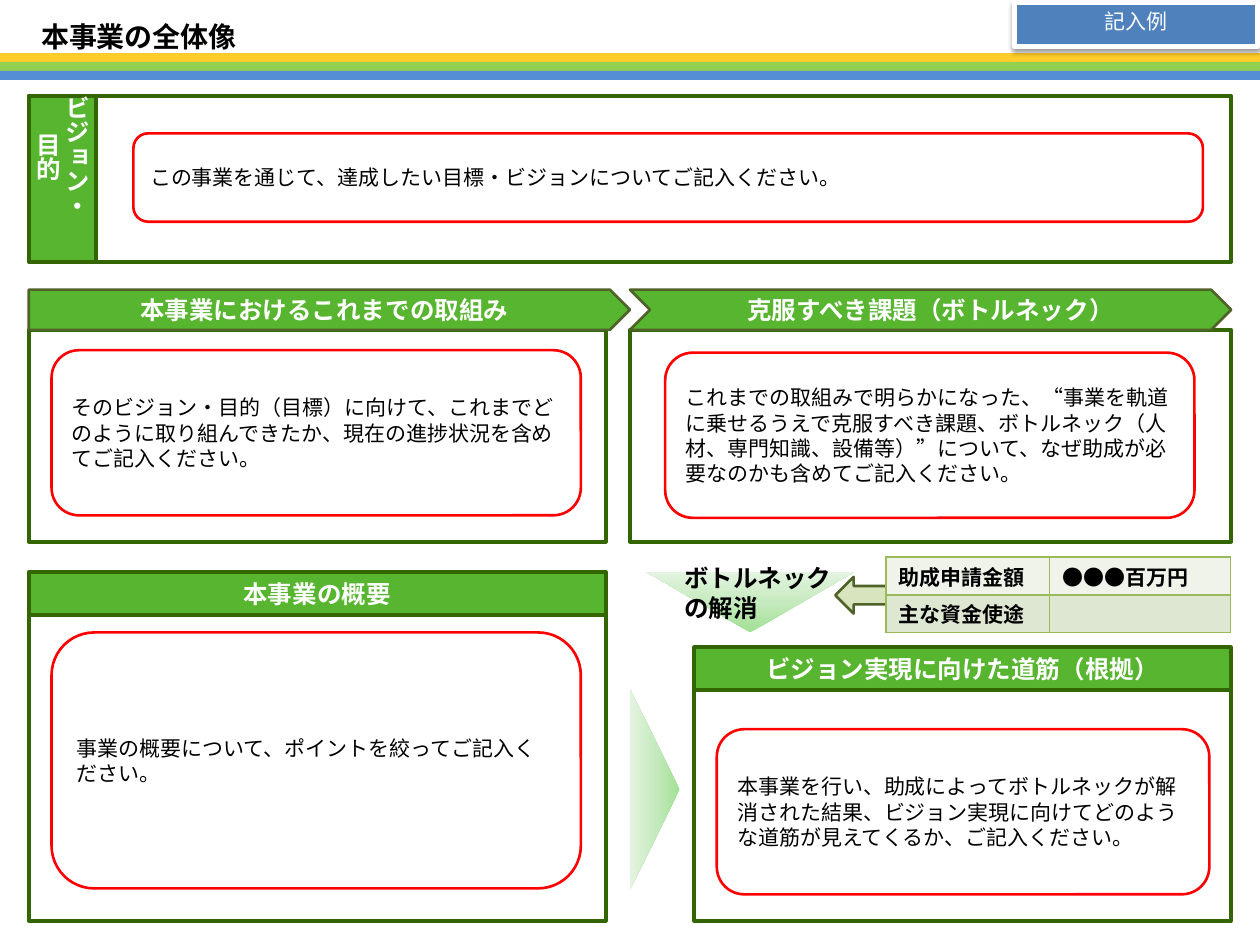
from lxml import etree
from pptx import Presentation
from pptx.dml.color import RGBColor
from pptx.enum import shapes, text
from pptx.oxml import parse_xml
from pptx.oxml.ns import nsdecls, qn
from pptx.util import Cm, Pt

FONT = "Noto Sans CJK JP"
GREEN, DARK_GREEN, OLIVE = "58B530", "336600", "4F6228"
WHITE, BLACK, RED = "FFFFFF", "000000", "FF0000"
KIND = shapes.MSO_SHAPE
MIDDLE, TOP = text.MSO_ANCHOR.MIDDLE, text.MSO_ANCHOR.TOP
CENTER, LEFT = text.PP_ALIGN.CENTER, text.PP_ALIGN.LEFT
HEADING = {"size": Pt(14), "bold": True}
BODY = {"size": Pt(12), "bold": False}
CELL = {"size": Pt(12), "bold": True}
SIDES = ("margin_left", "margin_top", "margin_right", "margin_bottom")
HEADER_HEIGHT = 0.86


def rgb(value):
    return RGBColor.from_string(value)


def apply(target, values):
    for name, value in values.items():
        setattr(target, name, value)


def write(frame, lines, style, color=BLACK, align=LEFT, anchor=MIDDLE):
    apply(frame, {"word_wrap": True, "vertical_anchor": anchor})
    for index, line in enumerate(lines):
        paragraph = frame.add_paragraph() if index else frame.paragraphs[0]
        paragraph.alignment = align
        run = paragraph.add_run()
        run.text = line
        apply(run.font, {**style, "name": FONT})
        run.font.color.rgb = rgb(color)
        etree.SubElement(run.font._element, qn("a:ea"), typeface=FONT)


def add_box(slide, kind, box, fill=None, line=None, width=2.25):
    shape = slide.shapes.add_shape(kind, *map(Cm, box))
    shape.shadow.inherit = False
    if fill:
        shape.fill.solid()
        shape.fill.fore_color.rgb = rgb(fill)
    else:
        shape.fill.background()
    if line:
        shape.line.color.rgb = rgb(line)
        shape.line.width = Pt(width)
    else:
        shape.line.fill.background()
    return shape


def add_note(slide, box, message):
    note = add_box(slide, KIND.ROUNDED_RECTANGLE, box, line=RED, width=1.5)
    write(note.text_frame, [message], BODY)


def add_page_header(slide, box):
    left, top, width, height = box
    stripe = 0.18
    for index, color in enumerate(("FFCC29", "92D050", "558ED5")):
        add_box(slide, KIND.RECTANGLE,
                (left, top + 1.07 + index * stripe, width, stripe), color)
    title = slide.shapes.add_textbox(*map(Cm, (left + 0.58, top + 0.15, 24.2, 1.17)))
    write(title.text_frame, ["本事業の全体像"], {"size": Pt(16), "bold": True})

    tag = add_box(slide, KIND.RECTANGLE,
                  (left + width - 4.95, top + 0.05, 4.9, 0.89), "4F81BD", WHITE, 3)
    write(tag.text_frame, ["記入例"], BODY, WHITE, CENTER, TOP)
    effects = tag._element.spPr.find(qn("a:effectLst"))
    effects.append(parse_xml(
        f'<a:outerShdw {nsdecls("a")} blurRad="39370" dist="20320" dir="5400000" '
        'rotWithShape="0"><a:srgbClr val="000000"><a:alpha val="38000"/>'
        '</a:srgbClr></a:outerShdw>'))


def add_vision(slide, box):
    left, top, width, height = box
    label_width = 1.35
    label = add_box(slide, KIND.RECTANGLE, (left, top, label_width, height),
                    GREEN, DARK_GREEN)
    apply(label.text_frame, dict.fromkeys(SIDES, 0))
    write(label.text_frame, ["ビジョン・", "目的"], HEADING, WHITE, CENTER)
    label.text_frame._txBody.bodyPr.set("vert", "eaVert")
    add_box(slide, KIND.RECTANGLE,
            (left + label_width, top, width - label_width, height), WHITE, DARK_GREEN)
    add_note(slide, (left + 2.11, top + 0.76, 21.56, 1.78),
             "この事業を通じて、達成したい目標・ビジョンについてご記入ください。")


def add_step(slide, box, kind, body_width, heading, note_box, message):
    left, top, width, height = box
    header = 0.81
    add_box(slide, KIND.RECTANGLE,
            (left, top + header, body_width, height - header), WHITE, DARK_GREEN)
    arrow = add_box(slide, kind, (left, top, width, header), GREEN, OLIVE, 1.5)
    write(arrow.text_frame, [heading], HEADING, WHITE, CENTER)
    dx, dy, note_width, note_height = note_box
    add_note(slide, (left + dx, top + dy, note_width, note_height), message)


def add_card(slide, box, heading, note_box, message):
    left, top, width, height = box
    add_box(slide, KIND.RECTANGLE,
            (left, top + HEADER_HEIGHT, width, height - HEADER_HEIGHT),
            WHITE, DARK_GREEN)
    header = add_box(slide, KIND.RECTANGLE, (left, top, width, HEADER_HEIGHT),
                     GREEN, DARK_GREEN)
    apply(header.text_frame, dict.fromkeys(SIDES, 0))
    write(header.text_frame, [heading], HEADING, WHITE, CENTER)
    dx, dy, note_width, note_height = note_box
    add_note(slide, (left + dx, top + dy, note_width, note_height), message)


def add_flow_triangle(slide, kind, box, angle, rotation=0):
    triangle = add_box(slide, kind, box, WHITE)
    triangle.rotation = rotation
    stops = "".join(
        f'<a:gs pos="{position}"><a:srgbClr val="{color}"/></a:gs>'
        for position, color in ((0, "A1E094"), (50000, "C6EABF"), (100000, "E3F4E0")))
    gradient = parse_xml(
        f'<a:gradFill {nsdecls("a")} rotWithShape="1"><a:gsLst>{stops}</a:gsLst>'
        f'<a:lin ang="{angle * 60000}" scaled="1"/></a:gradFill>')
    properties = triangle._element.spPr
    properties.replace(properties.find(qn("a:solidFill")), gradient)


def add_resolution(slide, box):
    left, top, width, height = box
    add_flow_triangle(slide, KIND.FLOWCHART_MERGE,
                      (left, top + 0.3, width, height - 0.3), 270)
    caption = slide.shapes.add_textbox(*map(Cm, (left + 0.51, top, 3.68, 1.45)))
    write(caption.text_frame, ["ボトルネックの解消"], HEADING, anchor=TOP)


def add_cell_borders(cell):
    properties = cell._tc.get_or_add_tcPr()
    for index, side in enumerate(("lnL", "lnR", "lnT", "lnB")):
        properties.insert(index, parse_xml(
            f'<a:{side} {nsdecls("a")} w="12700"><a:solidFill>'
            f'<a:srgbClr val="9BBB59"/></a:solidFill></a:{side}>'))


def add_funding(slide, box):
    left, top, width, height = box
    add_box(slide, KIND.LEFT_ARROW, (left - 1.02, top + 0.4, 2.01, 0.74),
            "D7E4BD", OLIVE, 1.5)
    table = slide.shapes.add_table(2, 2, *map(Cm, box)).table
    rows = (("助成申請金額", "●●●百万円"), ("主な資金使途", ""))
    for column, share in zip(table.columns, (3.3, width - 3.3)):
        column.width = Cm(share)
    for row, values, fill in zip(table.rows, rows, ("EFF3EA", "DEE7D1")):
        row.height = Cm(height / len(rows))
        for cell, value in zip(row.cells, values):
            apply(cell, {"margin_top": Cm(0.05), "margin_bottom": Cm(0.05),
                         "vertical_anchor": MIDDLE})
            cell.fill.solid()
            cell.fill.fore_color.rgb = rgb(fill)
            if value:
                write(cell.text_frame, [value], CELL)
            else:
                etree.SubElement(cell.text_frame.paragraphs[0]._p,
                                 qn("a:endParaRPr"), sz="1200")
            add_cell_borders(cell)


def main():
    deck = Presentation()
    apply(deck, {"slide_width": Cm(25.4), "slide_height": Cm(19.05)})
    slide = deck.slides.add_slide(deck.slide_layouts[6])
    left, middle, column = 0.58, 12.7, 11.63
    step_width = middle - left

    add_page_header(slide, (0, 0, 25.4, 1.6))
    add_vision(slide, (left, 1.93, 24.24, 3.35))
    add_step(slide, (left, 5.84, step_width, 5.08), KIND.PENTAGON, column,
             "本事業におけるこれまでの取組み", (0.46, 1.22, 10.67, 3.33),
             "そのビジョン・目的（目標）に向けて、これまでどのように取り組んできたか、"
             "現在の進捗状況を含めてご記入ください。")
    add_step(slide, (middle, 5.84, step_width, 5.08), KIND.CHEVRON, step_width,
             "克服すべき課題（ボトルネック）", (0.71, 1.27, 10.67, 3.33),
             "これまでの取組みで明らかになった、“事業を軌道に乗せるうえで克服すべき課題、"
             "ボトルネック（人材、専門知識、設備等）”について、"
             "なぜ助成が必要なのかも含めてご記入ください。")
    add_card(slide, (left, 11.53, column, 7.03), "本事業の概要",
             (0.46, 1.22, 10.67, 5.16),
             "事業の概要について、ポイントを絞ってご記入ください。")
    add_card(slide, (14, 13.05, 10.81, 5.52), "ビジョン実現に向けた道筋（根拠）",
             (0.45, 1.65, 9.93, 3.33),
             "本事業を行い、助成によってボトルネックが解消された結果、"
             "ビジョン実現に向けてどのような道筋が見えてくるか、ご記入ください。")
    add_flow_triangle(slide, KIND.FLOWCHART_EXTRACT, (11.2, 15.42, 4.01, 0.99), 90, 90)
    add_resolution(slide, (13.03, 11.23, 4.19, 1.52))
    add_funding(slide, (17.86, 11.23, 6.95, 1.52))
    deck.save("out.pptx")


if __name__ == "__main__":
    main()
